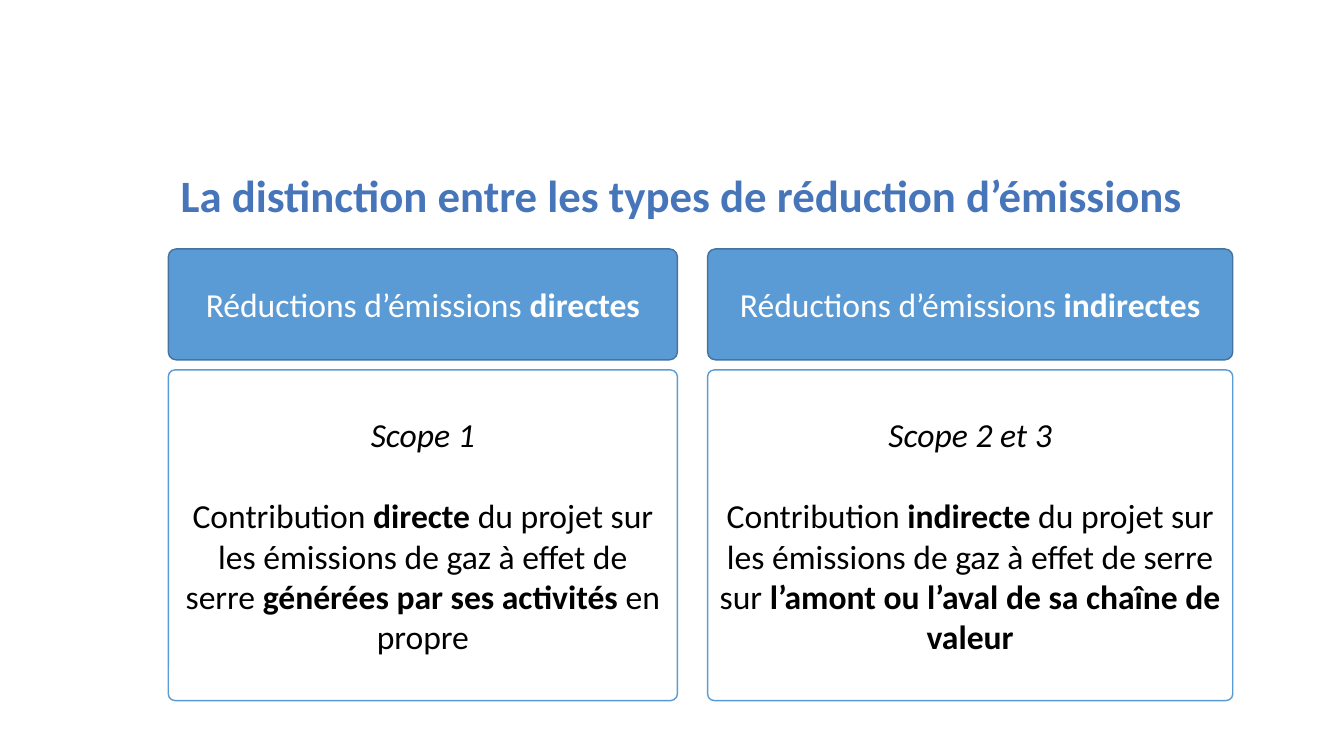
"""Build a slide comparing direct and indirect emission reductions."""
from dataclasses import dataclass

from pptx import Presentation
from pptx.dml.color import RGBColor
from pptx.enum.shapes import MSO_SHAPE as Shape
from pptx.enum.text import MSO_ANCHOR as Anchor, MSO_AUTO_SIZE as Fit, PP_ALIGN as Align
from pptx.slide import Slide
from pptx.text.text import _Paragraph as Para
from pptx.util import Pt

FONT = "Calibri"
TITLE = RGBColor(0x46, 0x75, 0xB9)
BLUE = RGBColor(0x5B, 0x9B, 0xD5)
EDGE = RGBColor(0x43, 0x73, 0x9E)
WHITE = RGBColor(0xFF, 0xFF, 0xFF)
BLACK = RGBColor(0x00, 0x00, 0x00)


@dataclass
class Style:
    """Look and vertical place of one row of boxes."""
    top: float
    height: float
    round: float
    fill: RGBColor
    line: RGBColor
    ink: RGBColor


@dataclass
class Column:
    """Place and wording of one column, with bold parts at odd indices."""
    left: float
    width: float
    head: list[str]
    scope: str
    body: list[str]


HEAD = Style(177.84, 79.2, 0.07, BLUE, EDGE, WHITE)
BODY = Style(264.24, 236.16, 0.02, WHITE, BLUE, BLACK)

COLUMNS = [
    Column(120.24, 363.6, ["Réductions d’émissions ", "directes"], "Scope 1",
           ["Contribution ", "directe",
            " du projet sur les émissions de gaz à effet de serre ",
            "générées par ses activités", " en propre"]),
    Column(505.44, 375.12, ["Réductions d’émissions ", "indirectes"], "Scope 2 et 3",
           ["Contribution ", "indirecte",
            " du projet sur les émissions de gaz à effet de serre sur ",
            "l’amont ou l’aval de sa chaîne de valeur"]),
]


def write(para: Para, parts: list[str], size: float, ink: RGBColor) -> None:
    """Fill a centred paragraph, with every second part in bold."""
    para.alignment = Align.CENTER
    para.font.name = FONT
    para.font.size = Pt(size)
    para.font.color.rgb = ink
    for index, part in enumerate(parts):
        run = para.add_run()
        run.text = part
        if index % 2:
            run.font.bold = True


def add_box(slide: Slide, col: Column, style: Style, rows: list[list[str]]) -> list[Para]:
    """Draw a rounded box and return its paragraphs."""
    box = slide.shapes.add_shape(Shape.ROUNDED_RECTANGLE, Pt(col.left), Pt(style.top),
                                 Pt(col.width), Pt(style.height))
    box.adjustments[0] = style.round
    box.shadow.inherit = False
    box.fill.solid()
    box.fill.fore_color.rgb = style.fill
    box.line.color.rgb = style.line
    box.line.width = Pt(1)
    frame = box.text_frame
    frame.word_wrap = True
    frame.vertical_anchor = Anchor.MIDDLE
    for index, parts in enumerate(rows):
        para = frame.add_paragraph() if index else frame.paragraphs[0]
        write(para, parts, 24, style.ink)
    return list(frame.paragraphs)


def add_title(slide: Slide, text: str) -> None:
    """Place and format the title."""
    title = slide.shapes.title
    title.left, title.top = Pt(94.32), Pt(120.24)
    title.width, title.height = Pt(785.52), Pt(390.24)
    frame = title.text_frame
    frame.auto_size = Fit.NONE
    frame.word_wrap = True
    frame.vertical_anchor = Anchor.TOP
    para = frame.paragraphs[0]
    write(para, [text], 32, TITLE)
    para.font.bold = True
    para.line_spacing = 0.9


def main() -> None:
    """Build and save the slide."""
    deck = Presentation()
    deck.slide_width, deck.slide_height = Pt(960), Pt(540)
    slide = deck.slides.add_slide(deck.slide_layouts[5])
    add_title(slide, "La distinction entre les types de réduction d’émissions")
    for col in COLUMNS:
        add_box(slide, col, HEAD, [col.head])
        scope, body = add_box(slide, col, BODY, [[col.scope], col.body])
        scope.font.italic = True
        body.space_before = Pt(29)
    deck.save("out.pptx")


if __name__ == "__main__":
    main()
